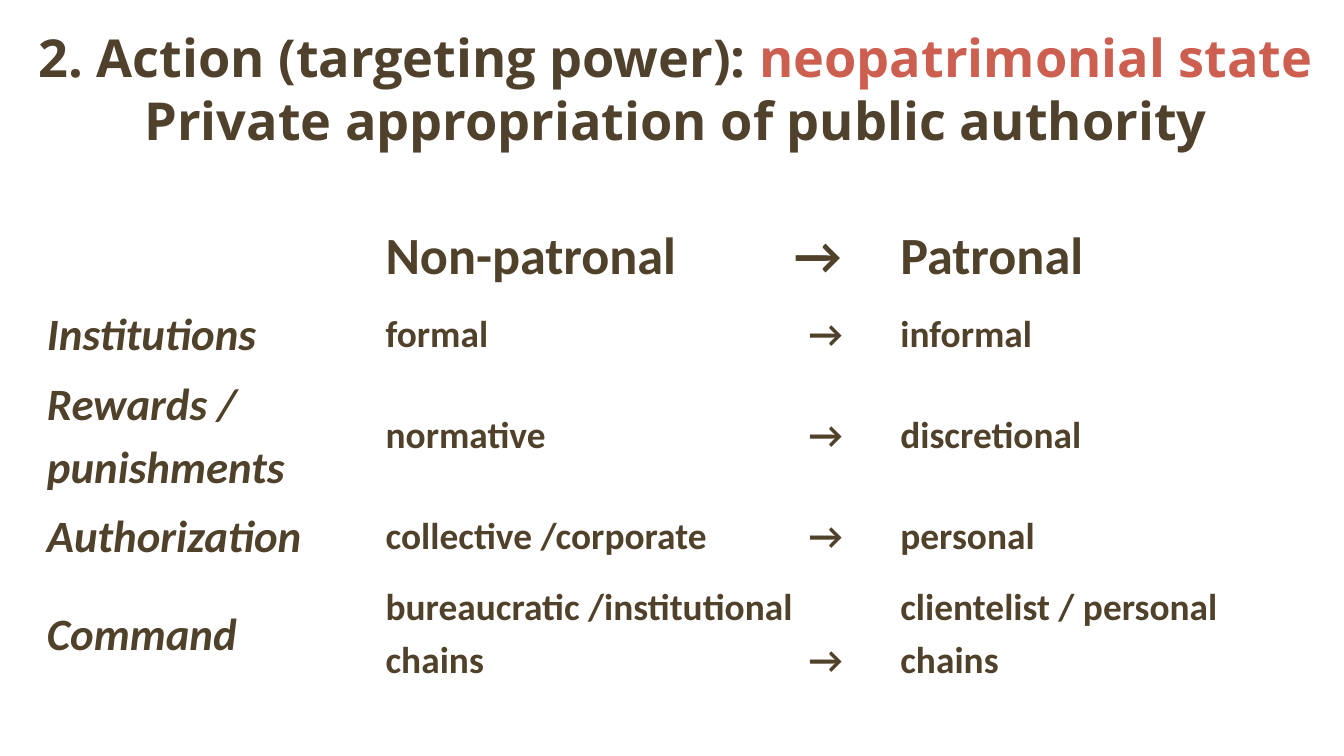
"""Build a slide contrasting non-patronal and patronal forms of state action."""
import pptx
import pptx.dml.color
import pptx.enum.text
import pptx.oxml
import pptx.oxml.ns
import pptx.util

Inches = pptx.util.Inches
Pt = pptx.util.Pt

BROWN = pptx.dml.color.RGBColor(0x50, 0x41, 0x2B)
TITLE_BROWN = pptx.dml.color.RGBColor(0x50, 0x41, 0x2C)
CORAL = pptx.dml.color.RGBColor(0xCD, 0x5F, 0x50)

SLIDE_WIDTH = 10
SLIDE_HEIGHT = SLIDE_WIDTH * 9 / 16
TITLE = [
    [("2. Action (targeting power): ", TITLE_BROWN), ("neopatrimonial state", CORAL)],
    [("Private appropriation of public authority", TITLE_BROWN)],
]
COLUMN_WIDTHS = [2.52, 3.83, 3.18]
ROW_HEIGHTS = [0.59, 0.56, 0.56, 0.56, 0.89]
ROWS = [
    ("", "Non-patronal\t→", "Patronal"),
    ("Institutions", "formal\t→", "informal"),
    ("Rewards / punishments", "normative\t→", "discretional"),
    ("Authorization", "collective /corporate\t→", "personal"),
    ("Command", "bureaucratic /institutional\nchains\t→", "clientelist / personal chains"),
]


class SlideBuilder:
    def __init__(self, slide):
        self.slide = slide
        self.title_font = "Open Sans"
        self.table_font = "Calibri"

    def style(self, font, name, size, color, italic=False):
        font.name = name
        font.size = Pt(size)
        font.bold = True
        font.italic = italic
        font.color.rgb = color

    def add_tab_stop(self, paragraph, position):
        properties = paragraph._p.get_or_add_pPr()
        namespace = pptx.oxml.ns.nsdecls("a")
        properties.append(pptx.oxml.parse_xml(
            f'<a:tabLst {namespace}><a:tab pos="{Inches(position)}" algn="l"/></a:tabLst>'))

    def add_title(self, lines, left, top, width, height):
        shape = self.slide.shapes.add_textbox(
            Inches(left), Inches(top), Inches(width), Inches(height))
        text_frame = shape.text_frame
        text_frame.word_wrap = True
        text_frame.text = "\n".join("" for line in lines)
        for paragraph, line in zip(text_frame.paragraphs, lines):
            paragraph.alignment = pptx.enum.text.PP_ALIGN.CENTER
            for text, color in line:
                run = paragraph.add_run()
                run.text = text
                self.style(run.font, self.title_font, 28, color)

    def fill_cell(self, cell, text, size, italic, line_spacing, arrow_position):
        cell.fill.background()
        cell.vertical_anchor = pptx.enum.text.MSO_ANCHOR.MIDDLE
        cell.margin_left = cell.margin_right = Inches(0.07)
        cell.margin_top = Inches(0.01)
        cell.margin_bottom = 0
        cell.text_frame.text = text
        for paragraph in cell.text_frame.paragraphs:
            paragraph.line_spacing = line_spacing
            if "\t" in paragraph.text:
                self.add_tab_stop(paragraph, arrow_position)
            for run in paragraph.runs:
                self.style(run.font, self.table_font, size, BROWN, italic)

    def add_table(self, rows, left, top, column_widths, row_heights):
        table = self.slide.shapes.add_table(
            len(rows), len(column_widths), Inches(left), Inches(top),
            Inches(sum(column_widths)), Inches(sum(row_heights))).table
        table.first_row = table.horz_banding = False
        for column, width in zip(table.columns, column_widths):
            column.width = Inches(width)
        for row_index, (row, height) in enumerate(zip(rows, row_heights)):
            table.rows[row_index].height = Inches(height)
            is_header = row_index == 0
            for column_index, text in enumerate(row):
                is_label = column_index == 0 and not is_header
                size = 28 if is_header else 24 if is_label else 20
                self.fill_cell(
                    table.cell(row_index, column_index), text, size, is_label,
                    1.1 if is_header else 1.15, 3.04 if is_header else 3.15)


def main():
    presentation = pptx.Presentation()
    presentation.slide_width = Inches(SLIDE_WIDTH)
    presentation.slide_height = Inches(SLIDE_HEIGHT)
    builder = SlideBuilder(presentation.slides.add_slide(presentation.slide_layouts[6]))
    builder.add_table(ROWS, 0.28, 1.59, COLUMN_WIDTHS, ROW_HEIGHTS)
    builder.add_title(TITLE, 0.18, 0.14, 9.69, 1.18)
    presentation.save("out.pptx")


if __name__ == "__main__":
    main()
